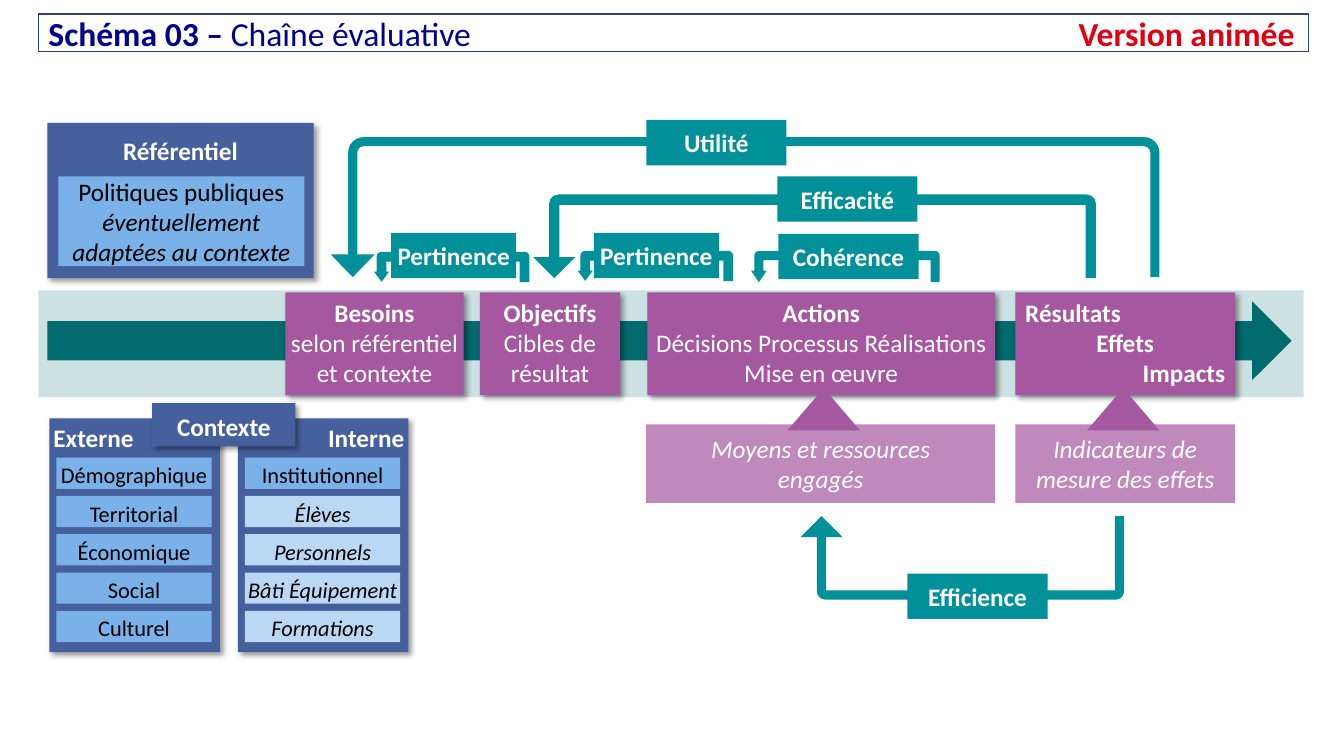
from dataclasses import dataclass

from lxml import etree
from pptx import Presentation
from pptx.dml.color import RGBColor
from pptx.enum.shapes import MSO_SHAPE
from pptx.enum.text import MSO_ANCHOR, MSO_AUTO_SIZE, PP_ALIGN
from pptx.oxml.ns import qn
from pptx.util import Inches, Pt


@dataclass(frozen=True)
class Theme:
    font: str = "Calibri"
    title_size: int = 24
    body_size: int = 18
    item_size: int = 16
    title: str = "000091"
    accent: str = "E1000F"
    frame: str = "2F4077"
    chain: str = "006A6F"
    criterion: str = "009099"
    stage: str = "A558A0"
    panel: str = "465F9D"
    item: str = "7AB1E8"
    soft_item: str = "BAD7F4"
    white: str = "FFFFFF"
    black: str = "000000"


THEME = Theme()
LEFT, CENTER, RIGHT = PP_ALIGN.LEFT, PP_ALIGN.CENTER, PP_ALIGN.RIGHT
WIDE = (0.1, 0.05)
TIGHT = (0.04, 0.05)

# Title runs: text, bold, colour
TITLE = [
    ("Schéma 03 – ", True, THEME.title),
    ("Chaîne évaluative\t", False, THEME.title),
    ("Version animée", True, THEME.accent),
]
TITLE_AT = (0.38, 0.14, 12.6, 0.37)
TITLE_TAB = 12.36

# Text lines: text, style ("b" bold, "i" italic), alignment
STAGES = [
    ((2.83, 1.77), TIGHT, [("Besoins", "b", CENTER), ("selon référentiel", "", CENTER),
                           ("et contexte", "", CENTER)]),
    ((4.76, 1.39), WIDE, [("Objectifs", "b", CENTER), ("Cibles de résultat", "", CENTER)]),
    ((6.42, 3.45), TIGHT, [("Actions", "b", CENTER),
                           ("Décisions Processus Réalisations", "", CENTER),
                           ("Mise en œuvre", "", CENTER)]),
    ((10.07, 2.18), WIDE, [("Résultats", "b", LEFT), ("Effets", "b", CENTER),
                           ("Impacts", "b", RIGHT)]),
]

# Supports: left and width, left of the pointer, lines
SUPPORTS = [
    ((6.41, 3.46), 7.81, ["Moyens et ressources", "engagés"]),
    ((10.07, 2.18), 10.78, ["Indicateurs de mesure des effets"]),
]

PERTINENCE_BEND = (0.319, 0.25, 0.336, 0.145, 0.987)
# Criteria: label, place of the label, place of the arrow, bend, flip
CRITERIA = [
    ("Utilité", (6.41, 1.19, 1.39, 0.45), (3.28, 1.36, 8.22, 1.39),
     (0.065, 0.157, 0.163, 0.111, 1), "h"),
    ("Efficacité", (7.71, 1.75, 1.39, 0.45), (5.29, 1.93, 5.58, 0.83),
     (0.124, 0.25, 0.25, 0.111, 1), "h"),
    ("Pertinence", (3.88, 2.31, 1.24, 0.45), (3.71, 2.5, 1.54, 0.3), PERTINENCE_BEND, "h"),
    ("Pertinence", (5.89, 2.31, 1.24, 0.45), (5.73, 2.49, 1.54, 0.3), PERTINENCE_BEND, "h"),
    ("Cohérence", (7.72, 2.32, 1.39, 0.45), (7.45, 2.49, 1.87, 0.31),
     (0.29, 0.25, 0.37, 0.138, 1), "h"),
    ("Efficience", (9, 5.69, 1.39, 0.45), (7.94, 5.12, 3.21, 0.83),
     (0.111, 0.25, 0.251, 0.101, 1), "hv"),
]

REFERENCE_TITLE = "Référentiel"
REFERENCE = [("Politiques publiques", "", CENTER),
             ("éventuellement adaptées au contexte", "i", CENTER)]

CONTEXT_TITLE = "Contexte"
# Context panels: heading, alignment, left, plain items, italic items
CONTEXTS = [
    ("Externe", LEFT, 0.49,
     ["Démographique", "Territorial", "Économique", "Social", "Culturel"], []),
    ("Interne", RIGHT, 2.36,
     ["Institutionnel"], ["Élèves", "Personnels", "Bâti Équipement", "Formations"]),
]


def apply(target, values):
    for name, value in values.items():
        setattr(target, name, value)


def format_run(run, size, color, bold=False, italic=False):
    apply(run.font, {"name": THEME.font, "size": Pt(size), "bold": bold, "italic": italic})
    run.font.color.rgb = RGBColor.from_string(color)


def add_figure(slide, kind, at, fill, opacity=100):
    """Add a filled, unlined shape; opacity is a percentage."""
    figure = slide.shapes.add_shape(kind, *map(Inches, at))
    figure.shadow.inherit = False
    figure.line.fill.background()
    figure.fill.solid()
    figure.fill.fore_color.rgb = RGBColor.from_string(fill)
    if opacity < 100:
        color = figure.element.spPr.find(qn("a:solidFill"))[0]
        etree.SubElement(color, qn("a:alpha"), val=str(opacity * 1000))
    return figure


def cast_shadow(figure):
    effects = figure.element.spPr.find(qn("a:effectLst"))
    shadow = etree.SubElement(effects, qn("a:outerShdw"), blurRad=str(Pt(4)),
                              dist=str(Pt(3)), dir=str(45 * 60000), rotWithShape="0")
    color = etree.SubElement(shadow, qn("a:srgbClr"), val=THEME.black)
    etree.SubElement(color, qn("a:alpha"), val="40000")


def add_box(slide, at, fill, lines, insets=TIGHT, anchor=MSO_ANCHOR.MIDDLE, opacity=100,
            shadow=False, color=THEME.white, size=THEME.body_size):
    """Add a rectangle of text; insets are the side and the top margin."""
    box = add_figure(slide, MSO_SHAPE.RECTANGLE, at, fill, opacity)
    if shadow:
        cast_shadow(box)
    side, top = insets
    frame = box.text_frame
    apply(frame, {"word_wrap": True, "vertical_anchor": anchor,
                  "margin_left": Inches(side), "margin_right": Inches(side),
                  "margin_top": Inches(top), "margin_bottom": Inches(0.05)})
    for index, (text, style, alignment) in enumerate(lines):
        paragraph = frame.add_paragraph() if index else frame.paragraphs[0]
        paragraph.alignment = alignment
        run = paragraph.add_run()
        run.text = text
        format_run(run, size, color, style == "b", style == "i")


def fill_title(slide):
    title = slide.shapes.title
    apply(title, dict(zip(("left", "top", "width", "height"), map(Inches, TITLE_AT))))
    title.line.color.rgb = RGBColor.from_string(THEME.frame)
    title.line.width = Pt(1)
    apply(title.text_frame, {"vertical_anchor": MSO_ANCHOR.MIDDLE, "word_wrap": True,
                             "auto_size": MSO_AUTO_SIZE.NONE})
    paragraph = title.text_frame.paragraphs[0]
    paragraph.alignment = LEFT
    tabs = etree.SubElement(paragraph._p.get_or_add_pPr(), qn("a:tabLst"))
    etree.SubElement(tabs, qn("a:tab"), pos=str(Inches(TITLE_TAB)), algn="r")
    for text, bold, color in TITLE:
        run = paragraph.add_run()
        run.text = text
        format_run(run, THEME.title_size, color, bold)


def add_chain(slide):
    add_figure(slide, MSO_SHAPE.RECTANGLE, (0.38, 2.88, 12.55, 1.06), THEME.chain, 20)
    add_figure(slide, MSO_SHAPE.RIGHT_ARROW, (0.47, 2.99, 12.34, 0.78), THEME.chain)
    for (left, width), insets, lines in STAGES:
        add_box(slide, (left, 2.9, width, 1.02), THEME.stage, lines, insets,
                MSO_ANCHOR.TOP, shadow=True)
    for (left, width), pointer_left, lines in SUPPORTS:
        add_box(slide, (left, 4.21, width, 0.78), THEME.stage,
                [(line, "i", CENTER) for line in lines], WIDE, opacity=70)
        add_figure(slide, MSO_SHAPE.ISOSCELES_TRIANGLE, (pointer_left, 3.85, 0.72, 0.42),
                   THEME.stage)


def add_criteria(slide):
    for label, label_at, arrow_at, bend, flip in CRITERIA:
        arrow = add_figure(slide, MSO_SHAPE.U_TURN_ARROW, arrow_at, THEME.criterion)
        for index, value in enumerate(bend):
            arrow.adjustments[index] = value
        for axis in flip:
            arrow.element.spPr.find(qn("a:xfrm")).set("flip" + axis.upper(), "1")
        add_box(slide, label_at, THEME.criterion, [(label, "b", CENTER)])


def add_reference(slide):
    add_box(slide, (0.47, 1.22, 2.64, 1.54), THEME.panel, [(REFERENCE_TITLE, "b", CENTER)],
            (0.04, 0.12), MSO_ANCHOR.TOP, shadow=True)
    add_box(slide, (0.58, 1.75, 2.44, 0.89), THEME.item, REFERENCE, color=THEME.black)


def add_contexts(slide):
    for heading, alignment, left, plain, italic in CONTEXTS:
        add_box(slide, (left, 4.15, 1.69, 2.32), THEME.panel, [(heading, "b", alignment)],
                (0.04, 0.04), MSO_ANCHOR.TOP, shadow=True)
        items = [(text, "", THEME.item) for text in plain]
        items += [(text, "i", THEME.soft_item) for text in italic]
        for row, (text, style, fill) in enumerate(items):
            add_box(slide, (left + 0.07, 4.54 + 0.38 * row, 1.54, 0.31), fill,
                    [(text, style, CENTER)], (0, 0.08), color=THEME.black,
                    size=THEME.item_size)
    add_box(slide, (1.51, 4, 1.42, 0.43), THEME.panel, [(CONTEXT_TITLE, "b", CENTER)],
            (0.1, 0.08), MSO_ANCHOR.TOP, shadow=True)


def main():
    deck = Presentation()
    deck.slide_width, deck.slide_height = Inches(13.33), Inches(7.5)
    slide = deck.slides.add_slide(deck.slide_layouts[5])
    for add_part in (fill_title, add_chain, add_criteria, add_reference, add_contexts):
        add_part(slide)
    deck.save("out.pptx")


if __name__ == "__main__":
    main()
